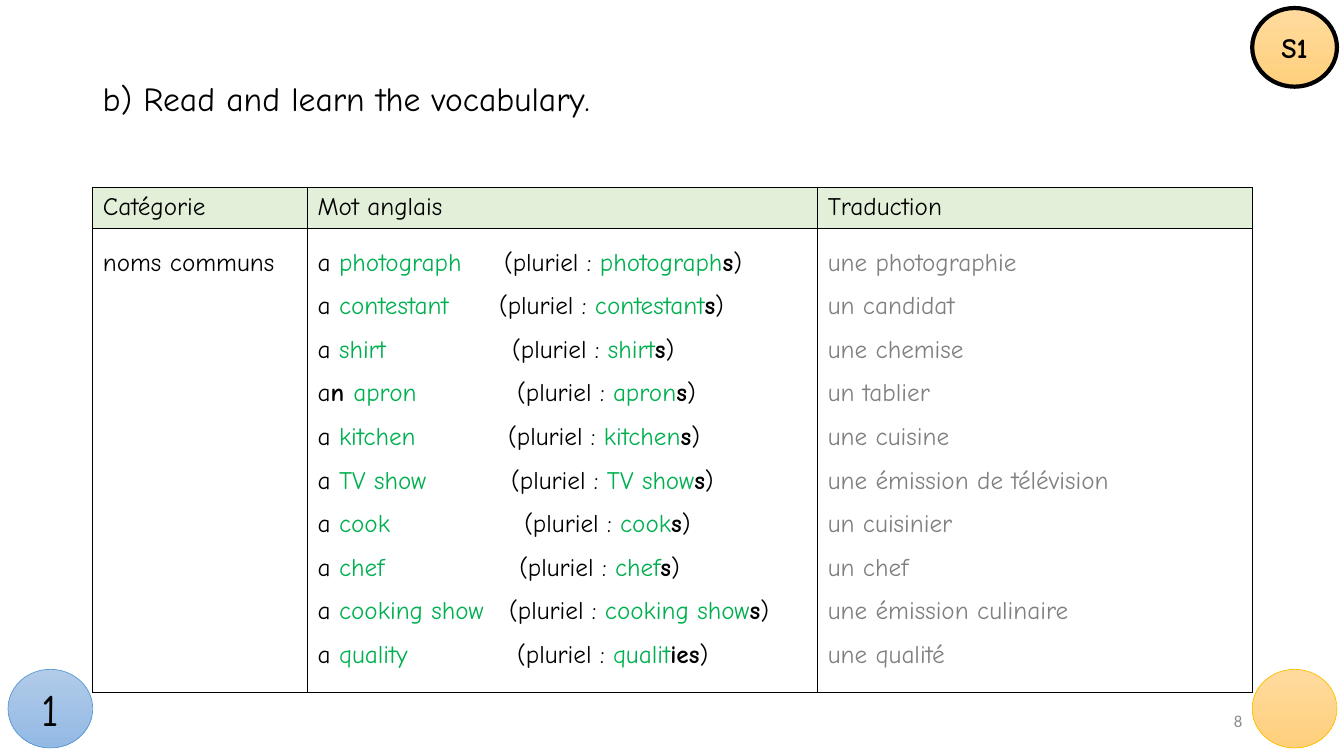
from dataclasses import dataclass

import pptx
import pptx.dml.color
import pptx.enum.shapes
import pptx.enum.text
import pptx.oxml
import pptx.oxml.ns
import pptx.slide
import pptx.table
import pptx.text.text
import pptx.util
from pptx.util import Inches

RGBColor = pptx.dml.color.RGBColor
ALIGN = pptx.enum.text.PP_ALIGN
MIDDLE = pptx.enum.text.MSO_ANCHOR.MIDDLE

BLACK = RGBColor(0x00, 0x00, 0x00)
GREEN = RGBColor(0x00, 0xB0, 0x50)
GREY = RGBColor(0x80, 0x80, 0x80)
NUMBER_GREY = RGBColor(0x8C, 0x8C, 0x8C)
HEADER_GREEN = RGBColor(0xE2, 0xF0, 0xD9)
GOLD = RGBColor(0xFF, 0xC0, 0x00)
GOLD_TOP = RGBColor(0xFF, 0xDB, 0x9E)
GOLD_BOTTOM = RGBColor(0xFF, 0xD0, 0x7C)
BLUE = RGBColor(0x5B, 0x9B, 0xD5)
BLUE_TOP = RGBColor(0xB1, 0xCB, 0xE9)
BLUE_BOTTOM = RGBColor(0x93, 0xB9, 0xE4)

COMIC = "Comic Neue"


@dataclass
class Noun:
    word: str
    translation: str
    plural_at: float  # tab stop of the plural, in inches
    stem: str = ""  # plural stem when it differs from the word
    ending: str = "s"
    article_end: str = ""


@dataclass
class Badge:
    left: float
    top: float
    gradient: tuple[RGBColor, RGBColor]
    outline: RGBColor
    outline_width: float
    label: str = ""
    size: int = 20
    bold: bool = False


NOUNS = [
    Noun("photograph", "une photographie", 1.85),
    Noun("contestant", "un candidat", 1.80),
    Noun("shirt", "une chemise", 1.93),
    Noun("apron", "un tablier", 1.98, article_end="n"),
    Noun("kitchen", "une cuisine", 1.89),
    Noun("TV show", "une émission de télévision", 1.92),
    Noun("cook", "un cuisinier", 2.05),
    Noun("chef", "un chef", 2.00),
    Noun("cooking show", "une émission culinaire", 1.90),
    Noun("quality", "une qualité", 1.98, stem="qualit", ending="ies"),
]
BADGES = [
    Badge(12.42, 6.64, (GOLD_TOP, GOLD_BOTTOM), GOLD, 0.5),
    Badge(12.42, 0.08, (GOLD_TOP, GOLD_BOTTOM), BLACK, 3, "S1", 20, True),
    Badge(0.08, 6.64, (BLUE_TOP, BLUE_BOTTOM), BLUE, 0.5, "1", 32),
]
HEADERS = ["Catégorie", "Mot anglais", "Traduction"]
COLUMN_WIDTHS = [2.13, 5.06, 4.31]
ROW_HEIGHTS = [0.41, 4.43]


def add_span(para: pptx.text.text._Paragraph, text: str, color: RGBColor = BLACK,
             size: float = 18, bold: bool = False, name: str = COMIC) -> None:
    span = para.add_run()
    span.text = text
    span.font.color.rgb = color
    formats = {"size": pptx.util.Pt(size), "bold": bold, "name": name}
    for attribute, value in formats.items():
        setattr(span.font, attribute, value)


def next_para(frame: pptx.text.text.TextFrame, index: int) -> pptx.text.text._Paragraph:
    para = frame.add_paragraph() if index else frame.paragraphs[0]
    para.line_spacing = 1.5
    return para


def add_tab_stop(para: pptx.text.text._Paragraph, position: float) -> None:
    properties = para._p.get_or_add_pPr()
    properties.append(pptx.oxml.parse_xml(
        f'<a:tabLst {pptx.oxml.ns.nsdecls("a")}>'
        f'<a:tab pos="{Inches(position)}" algn="l"/></a:tabLst>'))


def add_text_box(page: pptx.slide.Slide, left: float, top: float, width: float,
                 height: float) -> pptx.text.text.TextFrame:
    box = page.shapes.add_textbox(Inches(left), Inches(top), Inches(width), Inches(height))
    formats = {"word_wrap": True, "vertical_anchor": MIDDLE}
    for attribute, value in formats.items():
        setattr(box.text_frame, attribute, value)
    return box.text_frame


def add_borders(cell: pptx.table._Cell) -> None:
    properties = cell._tc.get_or_add_tcPr()
    for side in ("lnL", "lnR", "lnT", "lnB"):
        properties.append(pptx.oxml.parse_xml(
            f'<a:{side} {pptx.oxml.ns.nsdecls("a")} w="{pptx.util.Pt(1)}">'
            f'<a:solidFill><a:srgbClr val="{BLACK}"/></a:solidFill></a:{side}>'))


def write_noun(para: pptx.text.text._Paragraph, noun: Noun) -> None:
    add_tab_stop(para, noun.plural_at)
    if noun.article_end:
        add_span(para, "a")
        add_span(para, noun.article_end + " ", bold=True)
    else:
        add_span(para, "a ")
    add_span(para, noun.word, GREEN)
    add_span(para, "\t(pluriel : ")
    add_span(para, noun.stem or noun.word, GREEN)
    add_span(para, noun.ending, bold=True)
    add_span(para, ")")


def add_vocabulary(page: pptx.slide.Slide) -> None:
    table = page.shapes.add_table(
        len(ROW_HEIGHTS), len(COLUMN_WIDTHS), Inches(0.92), Inches(1.86),
        Inches(sum(COLUMN_WIDTHS)), Inches(sum(ROW_HEIGHTS))).table
    for attribute in ("first_row", "horz_banding"):
        setattr(table, attribute, False)
    for column, width in zip(table.columns, COLUMN_WIDTHS):
        column.width = Inches(width)
    for row, height in zip(table.rows, ROW_HEIGHTS):
        row.height = Inches(height)

    # Header row and empty body cells
    for index, header in enumerate(HEADERS):
        head, body = table.cell(0, index), table.cell(1, index)
        for cell in (head, body):
            add_borders(cell)
        head.fill.solid()
        head.fill.fore_color.rgb = HEADER_GREEN
        body.fill.background()
        add_span(head.text_frame.paragraphs[0], header)

    # Nouns with their plurals and translations
    category, english, french = (table.cell(1, index).text_frame for index in range(3))
    add_span(next_para(category, 0), "noms communs")
    for index, noun in enumerate(NOUNS):
        write_noun(next_para(english, index), noun)
        add_span(next_para(french, index), noun.translation, GREY)


def add_badge(page: pptx.slide.Slide, badge: Badge) -> None:
    circle = page.shapes.add_shape(
        pptx.enum.shapes.MSO_SHAPE.OVAL, Inches(badge.left), Inches(badge.top),
        Inches(0.84), Inches(0.78))
    circle.shadow.inherit = False
    circle.fill.gradient()
    circle.fill.gradient_angle = 270
    for stop, color in zip(circle.fill.gradient_stops, badge.gradient):
        stop.color.rgb = color
    circle.line.color.rgb = badge.outline
    circle.line.width = pptx.util.Pt(badge.outline_width)
    if badge.label:
        circle.text_frame.vertical_anchor = MIDDLE
        para = circle.text_frame.paragraphs[0]
        para.alignment = ALIGN.CENTER
        add_span(para, badge.label, size=badge.size, bold=badge.bold)


def main() -> None:
    deck = pptx.Presentation()
    deck.slide_width, deck.slide_height = Inches(13.33), Inches(7.5)
    page = deck.slides.add_slide(deck.slide_layouts[6])

    # Title
    title = add_text_box(page, 0.92, 0.68, 11.5, 0.64).paragraphs[0]
    title.line_spacing = 0.9
    add_span(title, "b) Read and learn the vocabulary.", size=24)

    # Vocabulary table and corner badges
    add_vocabulary(page)
    for badge in BADGES:
        add_badge(page, badge)

    # Page number
    number = add_text_box(page, 9.42, 6.95, 3, 0.4).paragraphs[0]
    number.alignment = ALIGN.RIGHT
    add_span(number, "8", NUMBER_GREY, 12, name="Calibri")

    deck.save("out.pptx")


if __name__ == "__main__":
    main()
